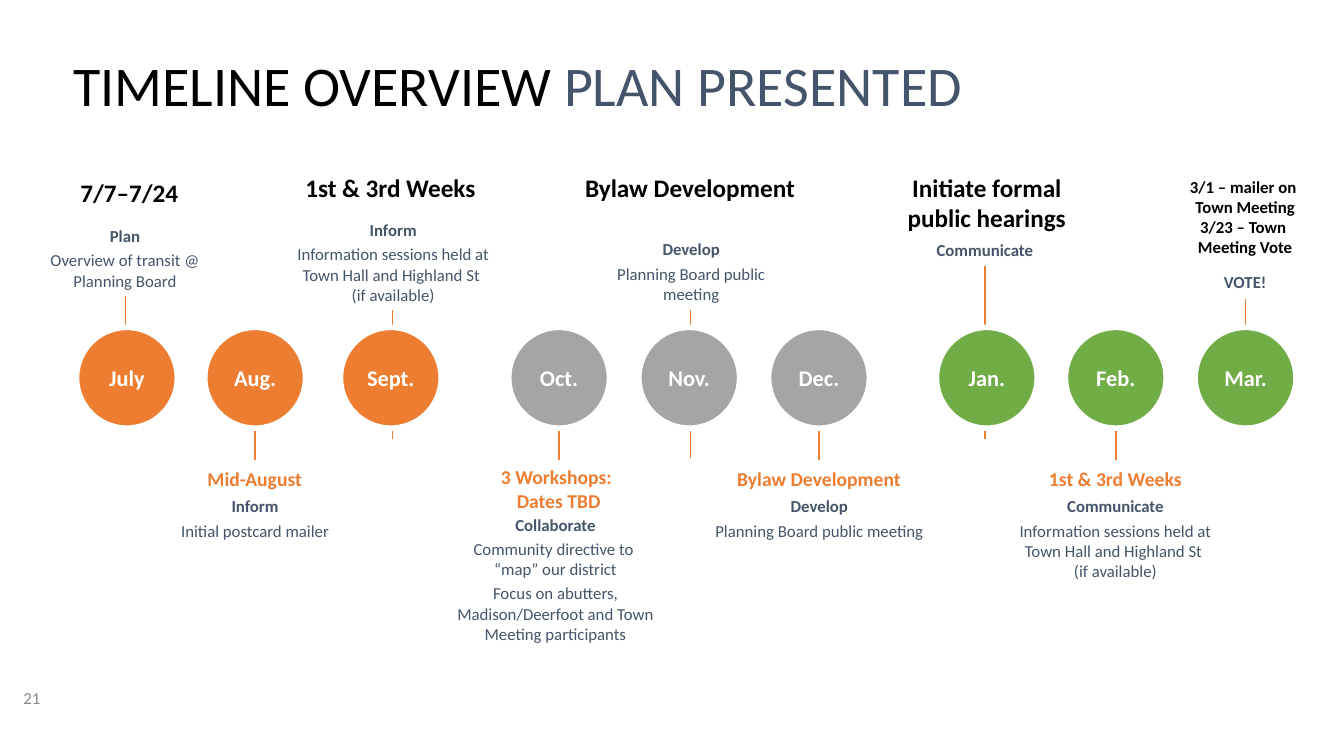
from copy import deepcopy
from dataclasses import dataclass

from lxml.etree import SubElement
from pptx import Presentation
from pptx.dml.color import RGBColor
from pptx.enum.shapes import MSO_CONNECTOR, MSO_SHAPE
from pptx.enum.text import MSO_ANCHOR, PP_ALIGN
from pptx.oxml.ns import qn
from pptx.util import Cm, Pt


@dataclass(frozen=True)
class Theme:
    font: str = "Calibri"
    black: str = "000000"
    white: str = "FFFFFF"
    slate: str = "44546A"
    page_grey: str = "888888"
    orange: str = "ED7D31"
    grey: str = "A5A5A5"
    green: str = "70AD47"
    title_size: int = 40
    heading_size: int = 18
    month_size: int = 16
    lower_heading_size: int = 14
    body_size: int = 12
    stem_width: float = 1
    ring_width: float = 4


THEME = Theme()

# All lengths are in centimetres.
TITLE = [("TIMELINE OVERVIEW ", THEME.black), ("PLAN PRESENTED", THEME.slate)]
PAGE_NUMBER = "21"
SESSIONS = "Information sessions held at Town Hall and Highland St \n(if available)"
BOARD_MEETING = "Planning Board public meeting"

# Month: centre, colour
MONTHS = {
    "July": (3.2, THEME.orange),
    "Aug.": (6.43, THEME.orange),
    "Sept.": (9.85, THEME.orange),
    "Oct.": (14.09, THEME.grey),
    "Nov.": (17.37, THEME.grey),
    "Dec.": (20.64, THEME.grey),
    "Jan.": (24.87, THEME.green),
    "Feb.": (28.12, THEME.green),
    "Mar.": (31.39, THEME.green),
}

# Stems behind the circles: x, top, bottom
UPPER_STEMS = [
    (3.16, 7.47, 10.69),
    (9.89, 7.82, 11.05),
    (17.4, 7.8, 11.53),
    (24.82, 6.71, 11.05),
    (31.39, 7.54, 10.72),
]
LOWER_STEM_MONTHS = ["Aug.", "Oct.", "Dec.", "Feb."]
LOWER_STEM_SPAN = (8.64, 11.58)

# Text blocks: (centre, top, width, height), paragraphs
UPPER_HEADINGS = [
    ((3.26, 4.47, 5.41, 0.94), ["7/7–7/24"]),
    ((9.84, 4.34, 5.41, 0.94), ["1st & 3rd Weeks"]),
    ((17.39, 4.34, 5.41, 0.94), ["Bylaw Development"]),
    ((24.87, 4.34, 4.42, 1.17), ["Initiate formal public hearings"]),
]
VOTE_DATES = [
    ((31.38, 4.32, 5.61, 2.31),
     ["3/1 – mailer on \nTown Meeting", "3/23 – Town \nMeeting Vote"]),
]
LOWER_HEADINGS = [
    ((6.42, 11.58, 7.19, 0.94), ["Mid-August"]),
    ((14.08, 11.58, 4.9, 1.47), ["3 Workshops: \nDates TBD"]),
    ((20.64, 11.58, 7.19, 0.94), ["Bylaw Development"]),
    ((28.11, 11.58, 7.19, 0.94), ["1st & 3rd Weeks"]),
]
DETAILS = [
    ((3.15, 5.56, 4.57, 1.9), ["Plan", "Overview of transit @ Planning Board"]),
    ((9.91, 5.41, 5.84, 2.41), ["Inform", SESSIONS]),
    ((17.42, 5.89, 5.61, 1.9), ["Develop", BOARD_MEETING]),
    ((24.82, 5.92, 4.57, 0.76), ["Communicate"]),
    ((31.38, 6.71, 5.61, 0.76), ["VOTE!"]),
    ((6.43, 12.37, 6.15, 1.4), ["Inform", "Initial postcard mailer"]),
    ((14, 12.83, 6.15, 3.56),
     ["Collaborate", "Community directive to \n“map” our district",
      "Focus on abutters, Madison/Deerfoot and Town Meeting participants"]),
    ((20.65, 12.37, 6.15, 1.9), ["Develop", BOARD_MEETING]),
    ((28.11, 12.37, 6.32, 2.41), ["Communicate", SESSIONS]),
]

CIRCLE_SIZE, CIRCLE_TOP = 2.54, 8.25
NO_INSET, BOX_INSET = (0, 0), (0.25, 0.13)


def set_font(run, size, color, bold=False):
    values = {"name": THEME.font, "size": Pt(size), "bold": bold}
    for name, value in values.items():
        setattr(run.font, name, value)
    run.font.color.rgb = RGBColor.from_string(color)


def set_frame(frame, inset, anchor):
    across, down = Cm(inset[0]), Cm(inset[1])
    values = {"word_wrap": True, "vertical_anchor": anchor,
              "margin_left": across, "margin_right": across,
              "margin_top": down, "margin_bottom": down}
    for name, value in values.items():
        setattr(frame, name, value)


def write_paragraph(paragraph, text, size, color, bold, align=PP_ALIGN.CENTER):
    """Write text, giving its line breaks the same font as its runs."""
    paragraph.text = text.replace("\n", "\v")
    paragraph.alignment = align
    for run in paragraph.runs:
        set_font(run, size, color, bold)
    run_format = paragraph.runs[0].font._element
    for line_break in paragraph._p.findall(qn("a:br")):
        line_break.insert(0, deepcopy(run_format))


def add_box(slide, left, top, width, height, inset, anchor=MSO_ANCHOR.TOP):
    box = slide.shapes.add_textbox(Cm(left), Cm(top), Cm(width), Cm(height))
    set_frame(box.text_frame, inset, anchor)
    return box.text_frame


def add_blocks(slide, blocks, size, color, inset, anchor=MSO_ANCHOR.TOP, lead=False):
    """Add centred text blocks; with lead, only the first paragraph is bold."""
    for (center, top, width, height), texts in blocks:
        frame = add_box(slide, center - width / 2, top, width, height, inset, anchor)
        for index, text in enumerate(texts):
            paragraph = frame.add_paragraph() if index else frame.paragraphs[0]
            write_paragraph(paragraph, text, size, color, not (lead and index))
            if lead and index:
                paragraph.space_before = Pt(3)


def add_stem(slide, x, top, bottom):
    stem = slide.shapes.add_connector(
        MSO_CONNECTOR.STRAIGHT, Cm(x), Cm(bottom), Cm(x), Cm(top))
    stem.line.color.rgb = RGBColor.from_string(THEME.orange)
    stem.line.width = Pt(THEME.stem_width)
    SubElement(stem._element.spPr, qn("a:effectLst"))


def add_month(slide, name, center, color):
    circle = slide.shapes.add_shape(
        MSO_SHAPE.OVAL, Cm(center - CIRCLE_SIZE / 2), Cm(CIRCLE_TOP),
        Cm(CIRCLE_SIZE), Cm(CIRCLE_SIZE))
    circle.shadow.inherit = False
    circle.fill.solid()
    circle.fill.fore_color.rgb = RGBColor.from_string(color)
    circle.line.color.rgb = RGBColor.from_string(THEME.white)
    circle.line.width = Pt(THEME.ring_width)
    set_frame(circle.text_frame, NO_INSET, MSO_ANCHOR.MIDDLE)
    write_paragraph(circle.text_frame.paragraphs[0], name,
                    THEME.month_size, THEME.white, True)


def main():
    presentation = Presentation()
    presentation.slide_width, presentation.slide_height = Cm(33.87), Cm(19.05)
    slide = presentation.slides.add_slide(presentation.slide_layouts[6])

    title = add_box(slide, 1.6, 1.4, 30.63, 2.31, BOX_INSET).paragraphs[0]
    title.line_spacing = 0.85
    for text, color in TITLE:
        run = title.add_run()
        run.text = text
        set_font(run, THEME.title_size, color)

    page = add_box(slide, 0, 16.94, 1.27, 1.27, BOX_INSET, MSO_ANCHOR.MIDDLE)
    write_paragraph(page.paragraphs[0], PAGE_NUMBER, THEME.body_size,
                    THEME.page_grey, False, PP_ALIGN.RIGHT)

    lower_stems = [(MONTHS[name][0], *LOWER_STEM_SPAN) for name in LOWER_STEM_MONTHS]
    for stem in UPPER_STEMS + lower_stems:
        add_stem(slide, *stem)
    for name, (center, color) in MONTHS.items():
        add_month(slide, name, center, color)

    add_blocks(slide, UPPER_HEADINGS, THEME.heading_size, THEME.black, NO_INSET)
    add_blocks(slide, VOTE_DATES, THEME.body_size, THEME.black, BOX_INSET)
    add_blocks(slide, LOWER_HEADINGS, THEME.lower_heading_size, THEME.orange,
               NO_INSET, MSO_ANCHOR.MIDDLE)
    add_blocks(slide, DETAILS, THEME.body_size, THEME.slate, BOX_INSET, lead=True)

    presentation.save("out.pptx")


if __name__ == "__main__":
    main()
